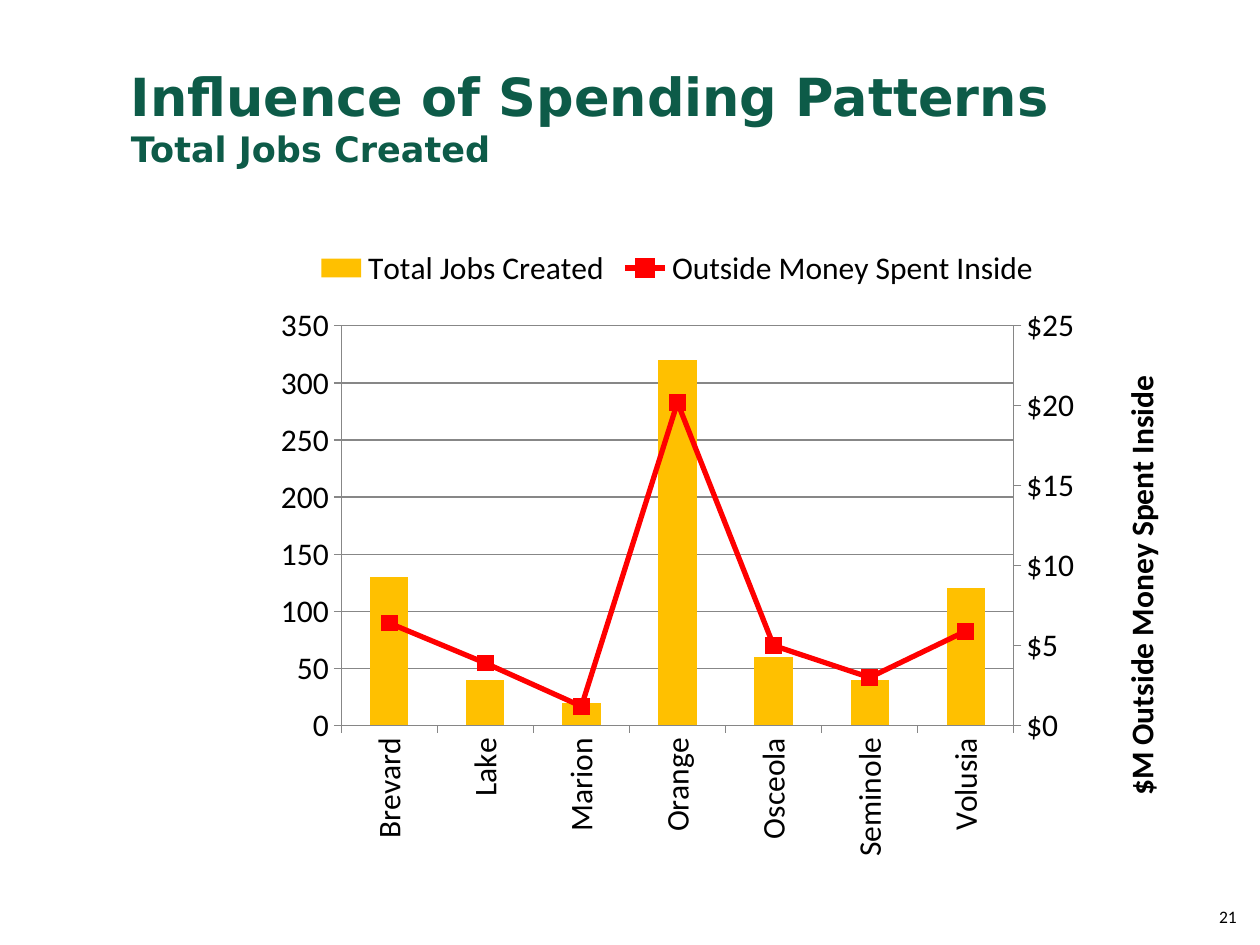
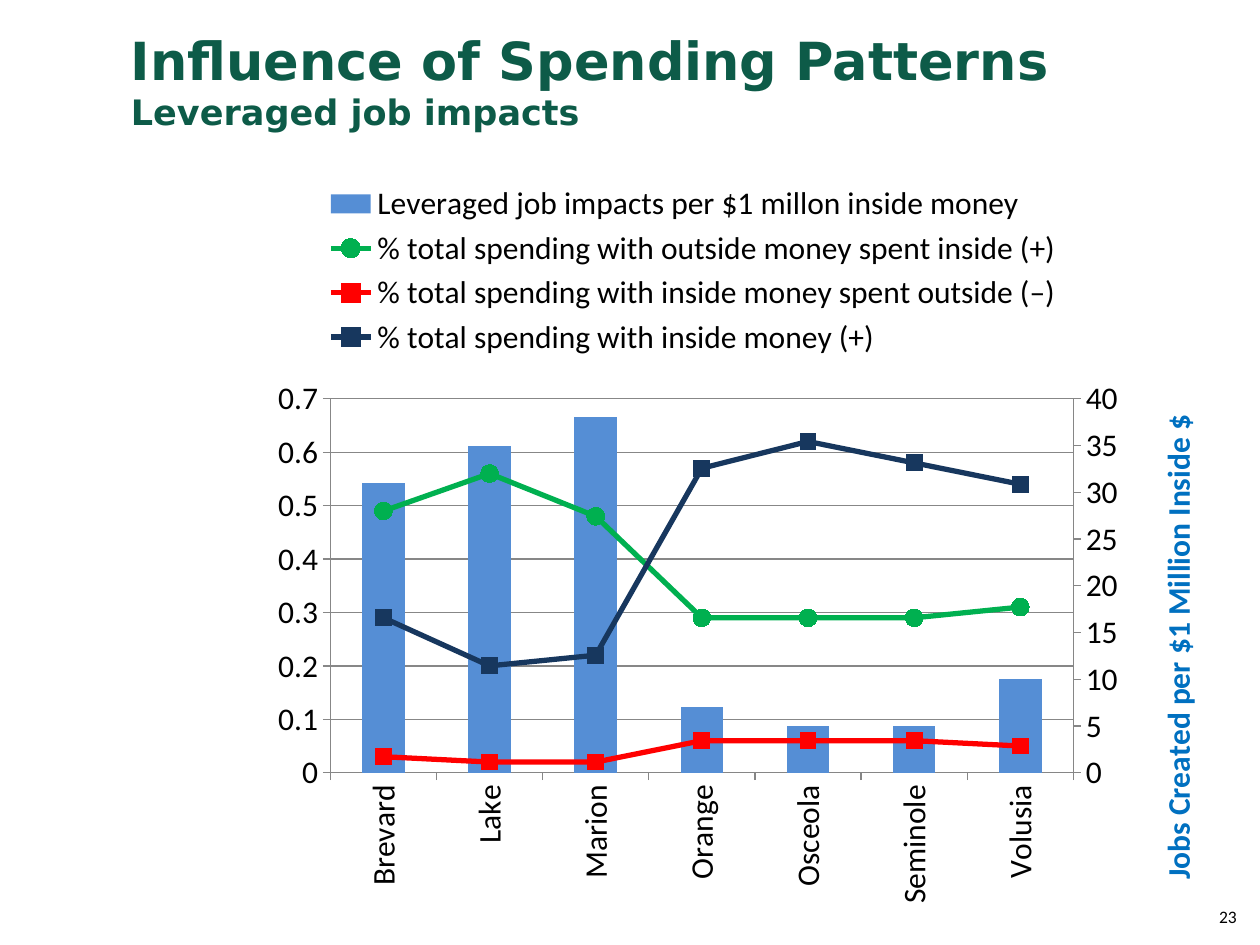
from copy import deepcopy

from pptx import Presentation
from pptx.chart.axis import CategoryAxis, ValueAxis
from pptx.chart.data import CategoryChartData
from pptx.dml.color import RGBColor
from pptx.enum.chart import XL_CHART_TYPE as ChartType
from pptx.enum.chart import XL_LEGEND_POSITION as LegendPosition
from pptx.enum.chart import XL_MARKER_STYLE as Marker
from pptx.enum.chart import XL_TICK_MARK as TickMark
from pptx.enum.dml import MSO_LINE_DASH_STYLE as Dash
from pptx.enum.text import MSO_ANCHOR as Anchor
from pptx.enum.text import PP_ALIGN as Align
from pptx.oxml import parse_xml
from pptx.oxml.ns import nsdecls, qn
from pptx.util import Cm, Pt

COLORS = {
    "title": "0D5B48", "text": "000000", "axis": "868686", "jobs": "FFC000",
    "leverage": "558ED5", "leverage_title": "0070C0",
    "green": "00B050", "red": "FF0000", "navy": "17375E",
}
TITLE_FONT, BODY_FONT = "DejaVu Sans", "Calibri"
COUNTIES = ["Brevard", "Lake", "Marion", "Orange", "Osceola", "Seminole", "Volusia"]
VERTICAL = "-5400000"

# Boxes are (left, top, width, height) in cm; chart parts are relative to the chart.
TOTAL_JOBS = {
    "subtitle": "Total Jobs Created",
    "number": "21",
    "title_box": (2.39, 0.76, 21.74, 3.18),
    "chart_box": (3.66, 4.72, 19.94, 12.8),
    "plot": (3.22, 1.85, 13.57, 8.06),
    "legend": (2.6, 0.3, 14.8, 0.75),
    "bars": ("Total Jobs Created", [130, 40, 20, 320, 60, 40, 120], "jobs"),
    "lines": [("Outside Money Spent Inside", [6.4, 3.9, 1.2, 20.2, 5, 3, 5.9],
               "red", Marker.SQUARE, 9)],
    "bars_on_left": True,
    "grid_dash": Dash.SOLID,
    "left_axis": {"title": "Jobs per $ 1 Million", "color": "text", "at": (0.78, 4.4),
                  "maximum": 350, "step": 50, "format": "General"},
    "right_axis": {"title": "$M Outside Money Spent Inside", "color": "text",
                   "at": (18.8, 2.74), "maximum": 25, "step": 5,
                   "format": '"$"#,##0_);[Red]\\("$"#,##0\\)'},
}
LEVERAGED_JOBS = {
    "subtitle": "Leveraged job impacts",
    "number": "23",
    "title_box": (2.39, 0.28, 21.74, 2.67),
    "chart_box": (3.43, 3.45, 20.96, 15.06),
    "plot": (3.23, 4.59, 14.98, 7.54),
    "legend": (3.05, 0.15, 15, 3.7),
    "bars": ("Leveraged job impacts per $1 millon inside money",
             [31, 35, 38, 7, 5, 5, 10], "leverage"),
    "lines": [
        ("% total spending with outside money spent inside (+)",
         [0.49, 0.56, 0.48, 0.29, 0.29, 0.29, 0.31], "green", Marker.CIRCLE, 10),
        ("% total spending with inside money spent outside (–)",
         [0.03, 0.02, 0.02, 0.06, 0.06, 0.06, 0.05], "red", Marker.SQUARE, 9),
        ("% total spending with inside money (+)",
         [0.29, 0.2, 0.22, 0.57, 0.62, 0.58, 0.54], "navy", Marker.SQUARE, 9),
    ],
    "bars_on_left": False,
    "grid_dash": Dash.DASH,
    "left_axis": {"title": "Shares of Total Spending (lines)", "color": "text",
                  "at": (0.67, 5.3), "maximum": 0.7, "step": 0.1, "format": "0%"},
    "right_axis": {"title": "Jobs Created per $1 Million Inside $",
                   "color": "leverage_title", "at": (19.76, 4.8),
                   "maximum": 40, "step": 5, "format": "General"},
}


def rgb(name):
    return RGBColor.from_string(COLORS[name])


def set_font(font, size, color="text", bold=False, name=BODY_FONT):
    font.name, font.size, font.bold = name, Pt(size), bold
    font.color.rgb = rgb(color)


def add_text(slide, box, text):
    frame = slide.shapes.add_textbox(*map(Cm, box)).text_frame
    frame.word_wrap = True
    frame.vertical_anchor = Anchor.MIDDLE
    frame.text = text
    return frame.paragraphs[0]


def add_title(slide, box, subtitle):
    paragraph = add_text(slide, box, "Influence of Spending Patterns\v" + subtitle)
    for run, size in zip(paragraph.runs, (30, 20)):
        set_font(run.font, size, "title", True, TITLE_FONT)


def add_slide_number(slide, number):
    paragraph = add_text(slide, (22.94, 17.96, 2.24, 1.02), number)
    paragraph.alignment = Align.RIGHT
    set_font(paragraph.runs[0].font, 10)


def remove_children(element, tag):
    for child in element.findall(qn(tag)):
        element.remove(child)


def place_part(element, box, chart_box, target=""):
    """Give a chart part a manual layout; box may hold only left and top."""
    remove_children(element, "c:layout")
    names = "xywh"[:len(box)]
    target = f'<c:layoutTarget val="{target}"/>' if target else ""
    modes = '<c:xMode val="edge"/><c:yMode val="edge"/>'
    values = "".join(f'<c:{name} val="{length / chart_box[2 + index % 2]:.4f}"/>'
                     for index, (name, length) in enumerate(zip(names, box)))
    layout = parse_xml(f'<c:layout {nsdecls("c")}><c:manualLayout>{target}{modes}'
                       f'{values}</c:manualLayout></c:layout>')
    overlay = element.find(qn("c:overlay"))
    if overlay is None:
        element.insert(0, layout)
    else:
        overlay.addprevious(layout)


def split_off_lines(plot_area, bars_on_left):
    """Move all series but the first to a line plot with its own axes.

    Returns the right-hand value axis; the left-hand axes come first in the plot.
    """
    bar_plot = plot_area.find(qn("c:barChart"))
    bar_axes = [plot_area.find(qn(tag)) for tag in ("c:catAx", "c:valAx")]
    line_axes = [deepcopy(axis) for axis in bar_axes]
    line_ids = ("50010", "50020")
    for axis, own, crossed in zip(line_axes, line_ids, reversed(line_ids)):
        axis.find(qn("c:axId")).set("val", own)
        axis.find(qn("c:crossAx")).set("val", crossed)

    line_plot = parse_xml(
        f'<c:lineChart {nsdecls("c")}><c:grouping val="standard"/>'
        '<c:varyColors val="0"/><c:marker val="1"/>'
        + "".join(f'<c:axId val="{own}"/>' for own in line_ids) + "</c:lineChart>")
    line_marker = line_plot.find(qn("c:marker"))
    for series in bar_plot.findall(qn("c:ser"))[1:]:
        remove_children(series, "c:invertIfNegative")
        line_marker.addprevious(series)
    bar_plot.addnext(line_plot)

    left, right = (bar_axes, line_axes) if bars_on_left else (line_axes, bar_axes)
    for axis in left + right:
        plot_area.append(axis)
    right_category, right_value = right
    CategoryAxis(right_category).visible = False
    right_value.find(qn("c:axPos")).set("val", "r")
    right_value.find(qn("c:crosses")).set("val", "max")
    return ValueAxis(right_value)


def style_axis_line(axis):
    axis.major_tick_mark = TickMark.OUTSIDE
    axis.minor_tick_mark = TickMark.NONE
    axis.format.line.color.rgb = rgb("axis")
    axis.format.line.width = Pt(0.75)
    set_font(axis.tick_labels.font, 18)


def style_value_axis(axis, settings, chart_box):
    style_axis_line(axis)
    axis.minimum_scale, axis.maximum_scale = 0, settings["maximum"]
    axis.major_unit = settings["step"]
    axis.tick_labels.number_format = settings["format"]
    axis.tick_labels.number_format_is_linked = False
    title = axis.axis_title
    title.text_frame.text = settings["title"]
    run = title.text_frame.paragraphs[0].runs[0]
    set_font(run.font, 18, settings["color"], True)
    title_element = title.format.element if hasattr(title.format, "element") else title.element
    body = next(title_element.iter(qn("a:bodyPr")))
    body.set("rot", VERTICAL)
    body.set("vert", "horz")
    place_part(title_element, settings["at"], chart_box)


def style_series(chart, content):
    bar_plot, line_plot = chart.plots
    bar_plot.gap_width = 150
    bar_plot.vary_by_categories = False
    fill = bar_plot.series[0].format.fill
    fill.solid()
    fill.fore_color.rgb = rgb(content["bars"][2])
    for series, (_, _, color, style, size) in zip(line_plot.series, content["lines"]):
        series.smooth = False
        series.format.line.color.rgb = rgb(color)
        series.format.line.width = Pt(3)
        marker = series.marker
        marker.style, marker.size = style, size
        marker.format.fill.solid()
        marker.format.fill.fore_color.rgb = rgb(color)
        marker.format.line.color.rgb = rgb(color)


def add_combined_chart(slide, content):
    box = content["chart_box"]
    data = CategoryChartData()
    data.categories = COUNTIES
    for name, values, *_ in [content["bars"], *content["lines"]]:
        data.add_series(name, values)
    chart = slide.shapes.add_chart(
        ChartType.COLUMN_CLUSTERED, *map(Cm, box), data).chart
    chart.has_title = False
    set_font(chart.font, 18)

    plot_area = next(chart.element.iter(qn("c:plotArea")))
    right_axis = split_off_lines(plot_area, content["bars_on_left"])
    place_part(plot_area, content["plot"], box, "inner")
    style_series(chart, content)

    left_axis = chart.value_axis
    style_value_axis(left_axis, content["left_axis"], box)
    style_value_axis(right_axis, content["right_axis"], box)
    right_axis.has_major_gridlines = False
    left_axis.has_major_gridlines = True
    grid_line = left_axis.major_gridlines.format.line
    grid_line.color.rgb = rgb("axis")
    grid_line.width = Pt(0.75)
    grid_line.dash_style = content["grid_dash"]

    style_axis_line(chart.category_axis)
    category_element = next(plot_area.iter(qn("c:catAx")))
    labels = category_element.find(qn("c:txPr")).find(qn("a:bodyPr"))
    labels.set("rot", VERTICAL)
    labels.set("vert", "horz")

    chart.has_legend = True
    chart.legend.position = LegendPosition.TOP
    chart.legend.include_in_layout = False
    set_font(chart.legend.font, 18)
    place_part(next(chart.element.iter(qn("c:legend"))), content["legend"], box)


def add_chart_slide(presentation, content):
    slide = presentation.slides.add_slide(presentation.slide_layouts[6])
    add_slide_number(slide, content["number"])
    add_title(slide, content["title_box"], content["subtitle"])
    add_combined_chart(slide, content)


def main():
    presentation = Presentation()
    presentation.slide_width, presentation.slide_height = Cm(25.4), Cm(19.05)
    for content in (TOTAL_JOBS, LEVERAGED_JOBS):
        add_chart_slide(presentation, content)
    presentation.save("out.pptx")


if __name__ == "__main__":
    main()
